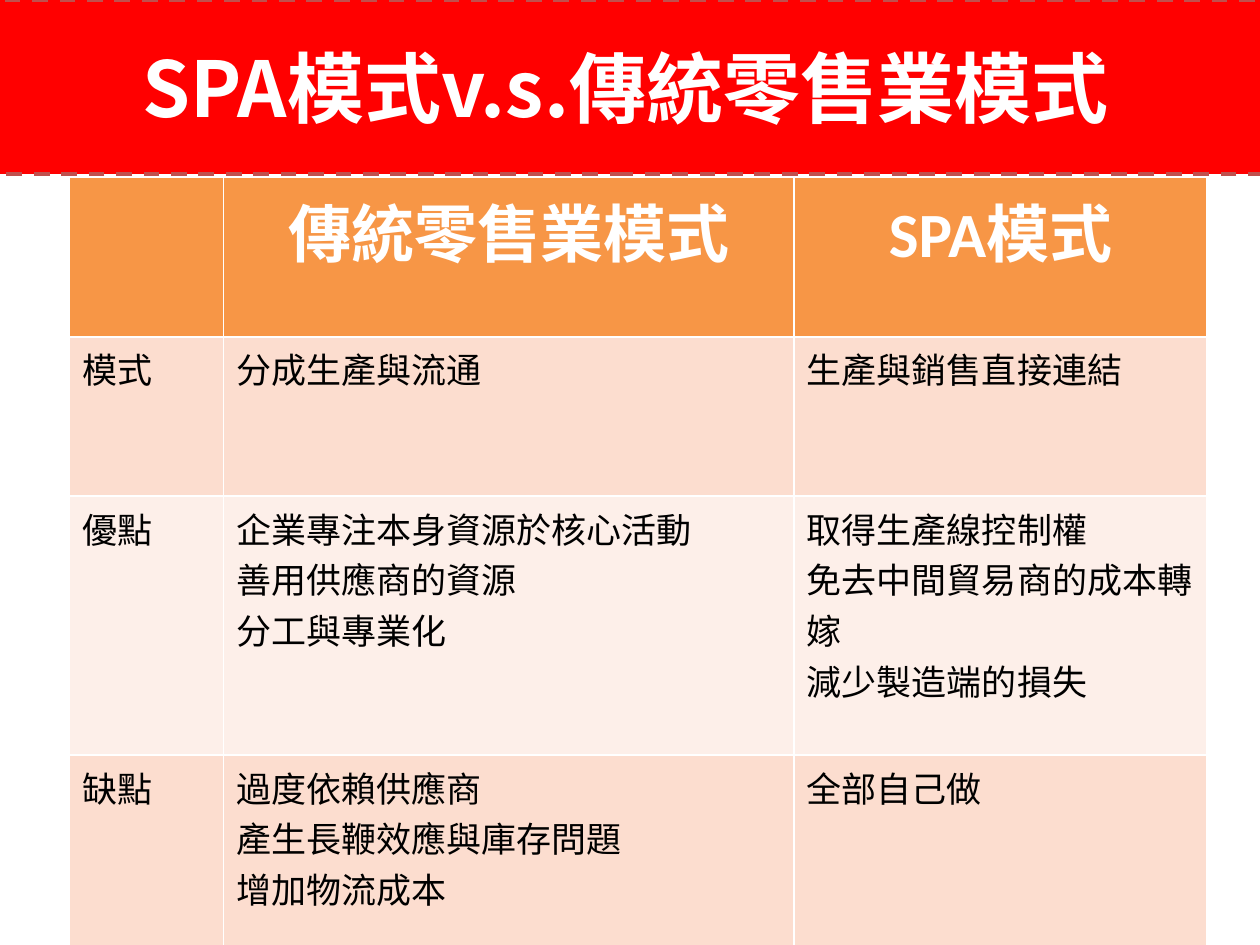
from lxml import etree
from pptx import Presentation
from pptx import util as u
from pptx.dml.color import RGBColor
from pptx.enum import dml, text
from pptx.oxml import ns

WHITE = RGBColor(0xFF, 0xFF, 0xFF)
BLACK = RGBColor(0, 0, 0)
RED = RGBColor(0xFF, 0, 0)
BRICK = RGBColor(0xC0, 0x50, 0x4D)
ORANGE = RGBColor(0xF7, 0x96, 0x46)
PEACH = RGBColor(0xFC, 0xDD, 0xCF)
PALE_PEACH = RGBColor(0xFD, 0xEF, 0xE9)

BODY_FONT = "Calibri"
BANNER_FONT = "Noto Sans CJK SC"
COLUMN_WIDTHS = (88, 326, 236)
ROW_HEIGHTS = (91, 91, 148, 110)
ROW_FILLS = (ORANGE, PEACH, PALE_PEACH, PEACH)
COMPARISON = (
    ("", "傳統零售業模式", "SPA模式"),
    ("模式", "分成生產與流通", "生產與銷售直接連結"),
    ("優點",
     "企業專注本身資源於核心活動\n善用供應商的資源\n分工與專業化",
     "取得生產線控制權\n免去中間貿易商的成本轉嫁\n減少製造端的損失"),
    ("缺點",
     "過度依賴供應商\n產生長鞭效應與庫存問題\n增加物流成本",
     "全部自己做"),
)


def format_text(frame, font_name, size, color, bold, align):
    """Apply one text style to every paragraph of a frame."""
    for paragraph in frame.paragraphs:
        paragraph.alignment = align
        for run in paragraph.runs:
            run.font.name = font_name
            run.font.size = u.Pt(size)
            run.font.bold = bold
            run.font.color.rgb = color


def add_banner(slide, wording):
    """Turn the title placeholder into a rounded red banner."""
    banner = slide.shapes.title
    banner.left, banner.top = u.Pt(-36.7), u.Pt(0)
    banner.width, banner.height = u.Pt(788.4), u.Pt(99.4)
    outline = etree.Element(ns.qn("a:prstGeom"), prst="roundRect")
    etree.SubElement(outline, ns.qn("a:avLst"))
    banner.element.spPr.find(ns.qn("a:xfrm")).addnext(outline)
    banner.fill.solid()
    banner.fill.fore_color.rgb = RED
    banner.line.color.rgb = BRICK
    banner.line.width = u.Pt(2.25)
    banner.line.dash_style = dml.MSO_LINE.DASH
    frame = banner.text_frame
    frame.text = wording
    frame.auto_size = text.MSO_AUTO_SIZE.NONE
    frame.vertical_anchor = text.MSO_ANCHOR.MIDDLE
    format_text(frame, BANNER_FONT, 44, WHITE, True, text.PP_ALIGN.CENTER)


def add_comparison(slide):
    """Add the table that compares the two retail models."""
    table = slide.shapes.add_table(
        len(ROW_HEIGHTS), len(COLUMN_WIDTHS), u.Pt(39.8), u.Pt(101.5),
        u.Pt(sum(COLUMN_WIDTHS)), u.Pt(sum(ROW_HEIGHTS))).table
    for column, width in zip(table.columns, COLUMN_WIDTHS):
        column.width = u.Pt(width)
    for index, (row, height) in enumerate(zip(table.rows, ROW_HEIGHTS)):
        row.height = u.Pt(height)
        for cell, wording in zip(row.cells, COMPARISON[index]):
            cell.fill.solid()
            cell.fill.fore_color.rgb = ROW_FILLS[index]
            cell.text_frame.text = wording
            if index == 0:
                format_text(cell.text_frame, BODY_FONT, 36, WHITE, True,
                            text.PP_ALIGN.CENTER)
            else:
                format_text(cell.text_frame, BODY_FONT, 20, BLACK, False,
                            text.PP_ALIGN.LEFT)


def main():
    """Build the slide and save it."""
    presentation = Presentation()
    presentation.slide_width = u.Pt(720)
    presentation.slide_height = u.Pt(540)
    slide = presentation.slides.add_slide(presentation.slide_layouts[5])
    add_comparison(slide)
    add_banner(slide, "SPA模式v.s.傳統零售業模式")
    presentation.save("out.pptx")


if __name__ == "__main__":
    main()
